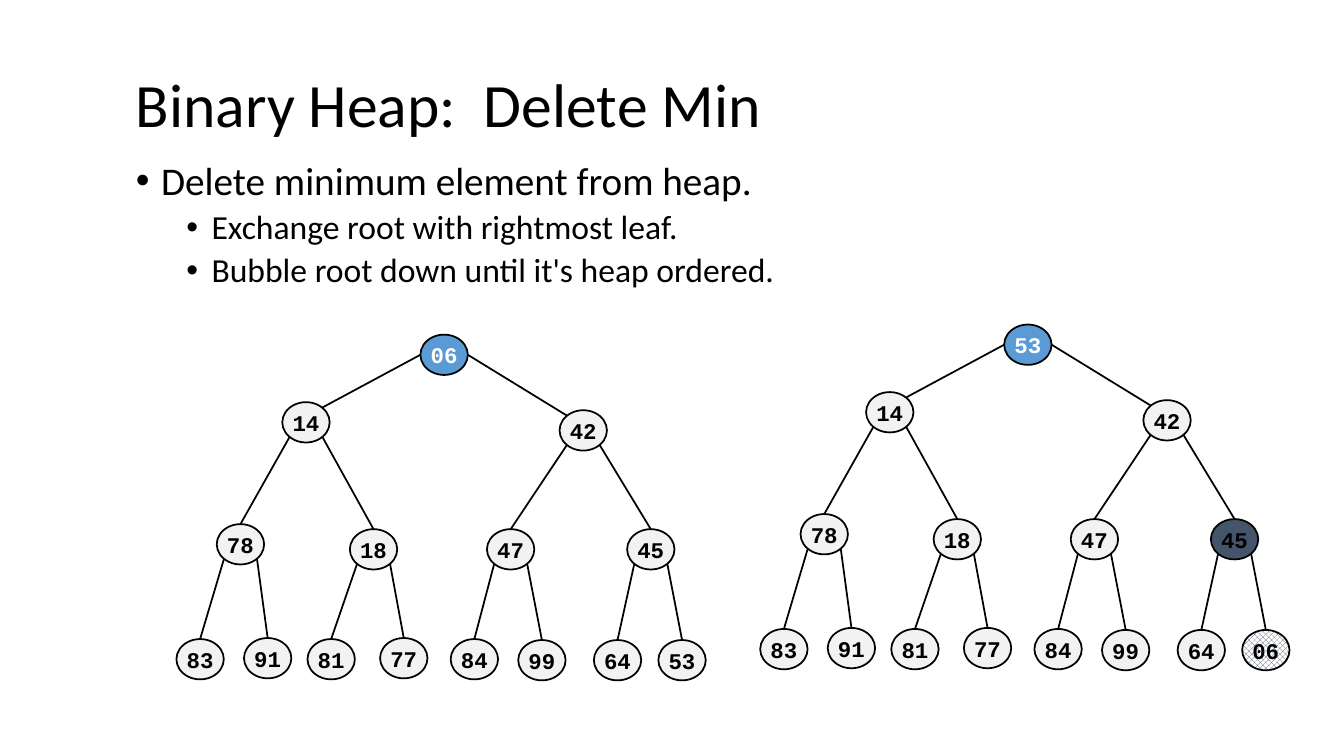
from dataclasses import dataclass

from pptx import Presentation
from pptx.dml.color import RGBColor
from pptx.enum.dml import MSO_PATTERN
from pptx.enum.shapes import MSO_CONNECTOR, MSO_SHAPE
from pptx.enum.text import MSO_ANCHOR, PP_ALIGN
from pptx.oxml.ns import qn
from pptx.util import Pt

PX = 9144  # 100 px to the inch


@dataclass(frozen=True)
class Theme:
    black = RGBColor(0x00, 0x00, 0x00)
    white = RGBColor(0xFF, 0xFF, 0xFF)
    root = RGBColor(0x5B, 0x9B, 0xD5)
    node = RGBColor(0xF2, 0xF2, 0xF2)
    dark = RGBColor(0x44, 0x54, 0x6A)
    text_font = "Calibri"
    key_font = "Courier New"
    title_size = Pt(44)
    level_sizes = (Pt(28), Pt(24))
    key_size = Pt(16)
    outline = Pt(1.25)


THEME = Theme()

NODE_W, NODE_H = 47, 40
# Top left corners in heap order, so node i has children 2i + 1 and 2i + 2.
NODE_CORNERS = [
    (242, 0),
    (105, 67), (380, 75),
    (40, 188), (172, 193), (308, 193), (447, 193),
    (0, 302), (67, 301), (130, 302), (202, 301),
    (272, 302), (339, 303), (414, 303), (478, 303),
]
HEAP = "06 14 42 78 18 47 45 83 91 81 77 84 99 64 53".split()
SWAPPED = [HEAP[-1], *HEAP[1:-1], HEAP[0]]

DELETE_STEPS = [
    (0, "Delete minimum element from heap."),
    (1, "Exchange root with rightmost leaf."),
    (1, "Bubble root down until it's heap ordered."),
]


def emu(*lengths):
    return [round(length * PX) for length in lengths]


def style_text(paragraph, size, font=THEME.text_font, color=THEME.black):
    paragraph.font.size = size
    paragraph.font.name = font
    paragraph.font.color.rgb = color


def add_title(slide, box, wording):
    frame = slide.shapes.add_textbox(*emu(*box)).text_frame
    frame.word_wrap = True
    frame.vertical_anchor = MSO_ANCHOR.MIDDLE
    title = frame.paragraphs[0]
    title.text = wording
    title.line_spacing = 0.9
    style_text(title, THEME.title_size)


def add_bullet(paragraph, level):
    properties = paragraph._p.get_or_add_pPr()
    indent, hanging = emu(25 + 50 * level, -25)
    properties.set("marL", str(indent))
    properties.set("indent", str(hanging))
    bullet_font = properties.makeelement(qn("a:buFont"), {"typeface": "Arial"})
    bullet = properties.makeelement(qn("a:buChar"), {"char": "•"})
    properties.insert_element_before(bullet_font, "a:tabLst", "a:defRPr", "a:extLst")
    properties.insert_element_before(bullet, "a:tabLst", "a:defRPr", "a:extLst")


def add_steps(slide, box, steps):
    frame = slide.shapes.add_textbox(*emu(*box)).text_frame
    frame.word_wrap = True
    for number, (level, wording) in enumerate(steps):
        step = frame.add_paragraph() if number else frame.paragraphs[0]
        step.text = wording
        step.level = level
        step.line_spacing = 0.9
        step.space_before = Pt(5 if level else 10)
        style_text(step, THEME.level_sizes[level])
        add_bullet(step, level)


def add_edge(slide, start, end):
    edge = slide.shapes.add_connector(MSO_CONNECTOR.STRAIGHT, *emu(*start, *end))
    edge.line.color.rgb = THEME.black
    edge.line.width = THEME.outline
    properties = edge._element.spPr
    properties.append(properties.makeelement(qn("a:effectLst"), {}))


def add_node(slide, corner, key, fill=THEME.node, key_color=THEME.black):
    node = slide.shapes.add_shape(MSO_SHAPE.OVAL, *emu(*corner, NODE_W, NODE_H))
    node.shadow.inherit = False
    node.fill.solid()
    node.fill.fore_color.rgb = fill
    node.line.color.rgb = THEME.black
    node.line.width = THEME.outline
    frame = node.text_frame
    frame.word_wrap = False
    frame.vertical_anchor = MSO_ANCHOR.MIDDLE
    label = frame.paragraphs[0]
    label.text = key
    label.alignment = PP_ALIGN.CENTER
    label.font.bold = True
    style_text(label, THEME.key_size, THEME.key_font, key_color)
    return node


def anchor(corner, across, down):
    """Point on a node, given as fractions of its width and height."""
    return corner[0] + across * NODE_W, corner[1] + down * NODE_H


def add_heap(slide, left, top, keys, fills):
    """Draw the edges, then the nodes; fills maps heap positions to colours."""
    corners = [(left + x, top + y) for x, y in NODE_CORNERS]
    for child in range(1, len(corners)):
        parent, is_right = (child - 1) // 2, child % 2 == 0
        if parent == 0:
            start = anchor(corners[0], 1 if is_right else 0, 0.5)
            end = anchor(corners[child], 0.15 if is_right else 0.85, 0.13)
        else:
            start = anchor(corners[parent], 0.85 if is_right else 0.15, 0.87)
            end = anchor(corners[child], 0.5, 0)
        add_edge(slide, start, end)

    nodes = []
    for position, (corner, key) in enumerate(zip(corners, keys)):
        key_color = THEME.black if position else THEME.white
        nodes.append(add_node(slide, corner, key, fills.get(position, THEME.node), key_color))
    return nodes


def hatch(node):
    node.fill.patterned()
    node.fill.pattern = MSO_PATTERN.OUTLINED_DIAMOND
    node.fill.fore_color.rgb = THEME.dark
    node.fill.back_color.rgb = THEME.white


def main():
    deck = Presentation()
    deck.slide_width, deck.slide_height = emu(1333, 750)
    slide = deck.slides.add_slide(deck.slide_layouts[6])
    add_title(slide, (125, 67, 1080, 80), "Binary Heap:  Delete Min")
    add_steps(slide, (125, 155, 1080, 442), DELETE_STEPS)
    add_heap(slide, 175, 332, HEAP, {0: THEME.root})
    swapped_nodes = add_heap(slide, 754, 322, SWAPPED, {0: THEME.root, 6: THEME.dark})
    hatch(swapped_nodes[-1])
    deck.save("out.pptx")


if __name__ == "__main__":
    main()
